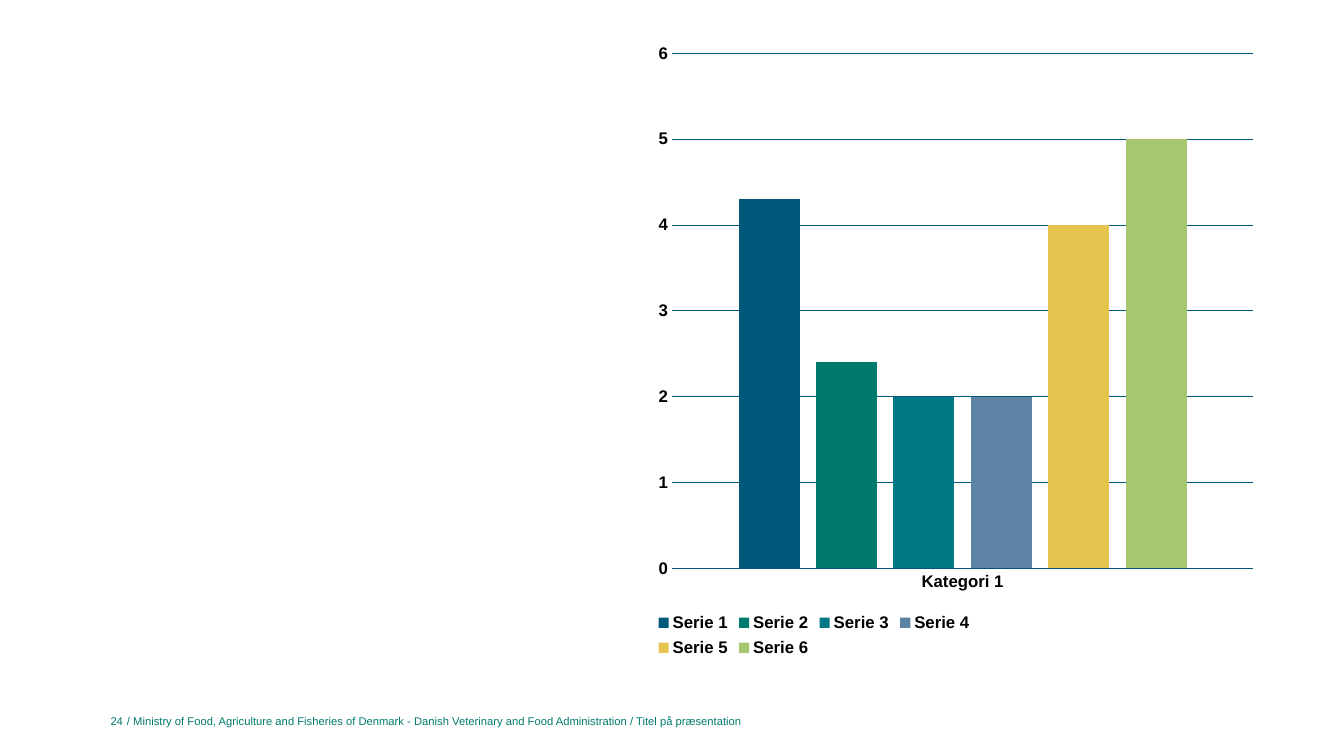
from lxml.etree import SubElement
from pptx import Presentation
from pptx.chart.data import CategoryChartData
from pptx.dml.color import RGBColor
from pptx.enum.chart import XL_CHART_TYPE, XL_LEGEND_POSITION, XL_TICK_MARK
from pptx.enum.text import MSO_ANCHOR, PP_ALIGN
from pptx.oxml.ns import qn
from pptx.util import Inches, Pt

NAVY = RGBColor(0x00, 0x58, 0x7A)
GREEN = RGBColor(0x00, 0x7A, 0x6C)
TEAL = RGBColor(0x00, 0x78, 0x85)
STEEL = RGBColor(0x5C, 0x82, 0xA5)
YELLOW = RGBColor(0xE5, 0xC5, 0x4E)
LIME = RGBColor(0xA7, 0xC6, 0x71)
BLACK = RGBColor(0, 0, 0)

# Content
CATEGORIES = ["Kategori 1"]
SERIES = [
    ("Serie 1", 4.3, NAVY),
    ("Serie 2", 2.4, GREEN),
    ("Serie 3", 2, TEAL),
    ("Serie 4", 2, STEEL),
    ("Serie 5", 4, YELLOW),
    ("Serie 6", 5, LIME),
]
FOOTER = [  # text, left, width, alignment
    ("/ Ministry of Food, Agriculture and Fisheries of Denmark - Danish Veterinary "
     "and Food Administration / Titel på præsentation", 1.26, 11.36, PP_ALIGN.LEFT),
    ("24", 0.89, 0.33, PP_ALIGN.RIGHT),
]
FOOTER_TOP, FOOTER_HEIGHT = 7, 0.22

# Shares of the chart: left, top, width, height
CHART_BOX = (6.35, 0.34, 6.27, 6.31)
PLOT_BOX = (0.05, 0.03, 0.92, 0.81)
LEGEND_BOX = (0.02, 0.9, 0.51, 0.09)

BASE_FONT = {"name": "Arial", "size": Pt(10)}
LABEL_FONT = {"name": "Arial", "size": Pt(12), "bold": True}
FOOTER_FONT = {"name": "Arial", "size": Pt(8)}


def set_font(font, values, color):
    for key, value in values.items():
        setattr(font, key, value)
    font.color.rgb = color


def set_line(line):
    line.color.rgb = NAVY
    line.width = Pt(0.75)


def place(parent, index, box, inner=False):
    """Give a chart part a fixed place, as shares of the chart."""
    for old in parent.findall(qn("c:layout")):
        parent.remove(old)
    layout = SubElement(parent, qn("c:layout"))
    manual = SubElement(layout, qn("c:manualLayout"))
    values = [("layoutTarget", "inner")] if inner else []
    values += [("xMode", "edge"), ("yMode", "edge"), *zip("xywh", box)]
    for tag, value in values:
        SubElement(manual, qn(f"c:{tag}")).set("val", str(value))
    parent.insert(index, layout)


prs = Presentation()
prs.slide_width, prs.slide_height = Inches(13.33), Inches(7.5)
s = prs.slides.add_slide(prs.slide_layouts[6])

# Column chart
data = CategoryChartData()
data.categories = CATEGORIES
for name, value, _ in SERIES:
    data.add_series(name, [value])
chart = s.shapes.add_chart(
    XL_CHART_TYPE.COLUMN_CLUSTERED, *map(Inches, CHART_BOX), data).chart
chart.has_title = False
set_font(chart.font, BASE_FONT, BLACK)

plot = chart.plots[0]
plot.gap_width, plot.overlap, plot.vary_by_categories = 219, -27, False
for series, (_, _, color) in zip(plot.series, SERIES):
    series.format.fill.solid()
    series.format.fill.fore_color.rgb = color
    series.invert_if_negative = False
place(chart._chartSpace.chart.plotArea, 0, PLOT_BOX, inner=True)

# Axes
cat_axis, val_axis = chart.category_axis, chart.value_axis
for axis in (cat_axis, val_axis):
    axis.major_tick_mark = axis.minor_tick_mark = XL_TICK_MARK.NONE
    set_font(axis.tick_labels.font, LABEL_FONT, BLACK)
set_line(cat_axis.format.line)
val_axis.format.line.fill.background()
val_axis.minimum_scale, val_axis.maximum_scale, val_axis.major_unit = 0, 6, 1
val_axis.has_major_gridlines = True
set_line(val_axis.major_gridlines.format.line)

# Legend
chart.has_legend = True
legend = chart.legend
legend.position = XL_LEGEND_POSITION.BOTTOM
legend.include_in_layout = False
set_font(legend.font, LABEL_FONT, BLACK)
place(legend._element, 1, LEGEND_BOX)

# Footer and page number
for text, left, width, align in FOOTER:
    box = s.shapes.add_textbox(*map(Inches, (left, FOOTER_TOP, width, FOOTER_HEIGHT)))
    tf = box.text_frame
    tf.word_wrap = True
    tf.vertical_anchor = MSO_ANCHOR.BOTTOM
    for side in ("left", "top", "right", "bottom"):
        setattr(tf, f"margin_{side}", 0)
    p = tf.paragraphs[0]
    p.alignment = align
    r = p.add_run()
    r.text = text
    set_font(r.font, FOOTER_FONT, GREEN)

prs.save("out.pptx")
